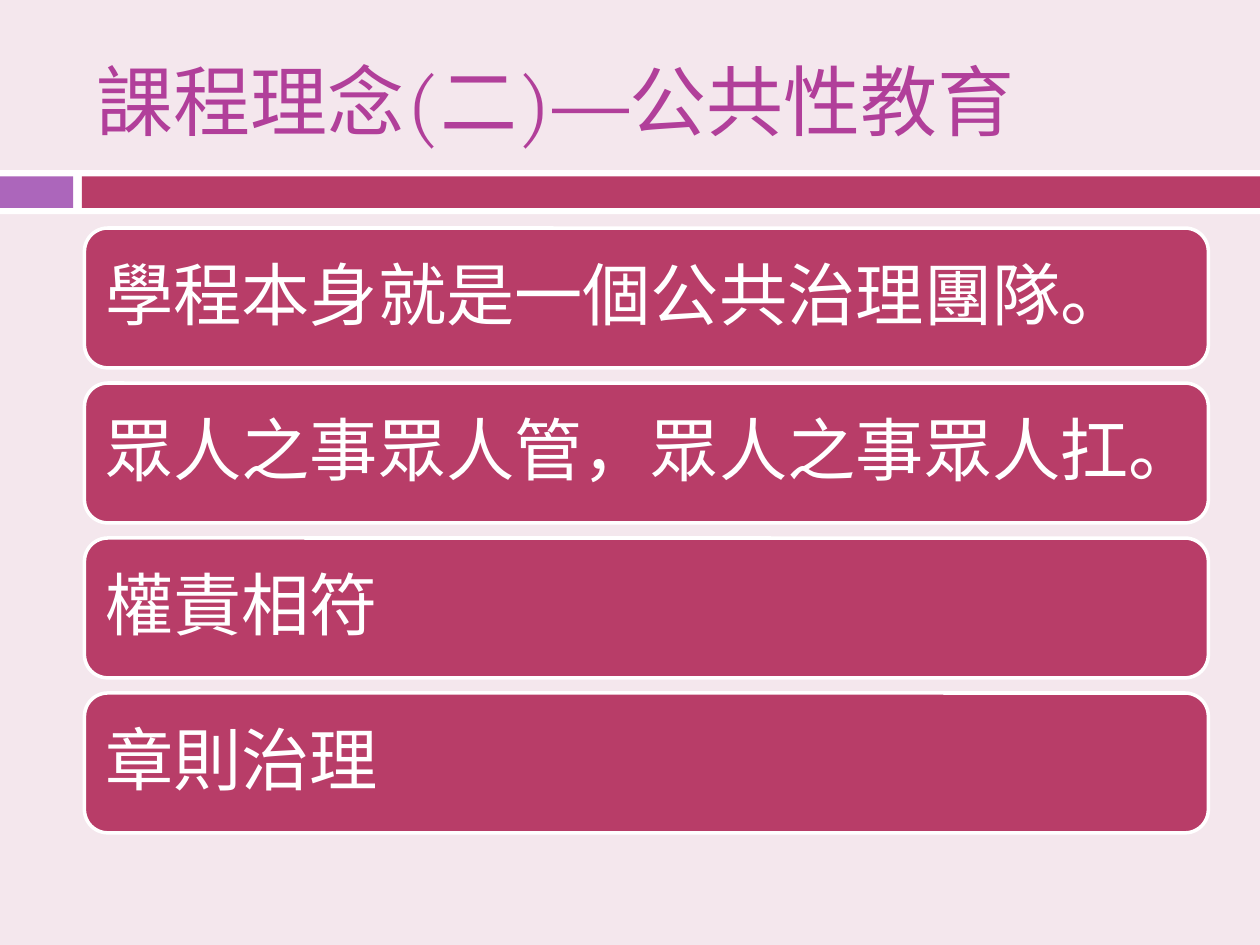
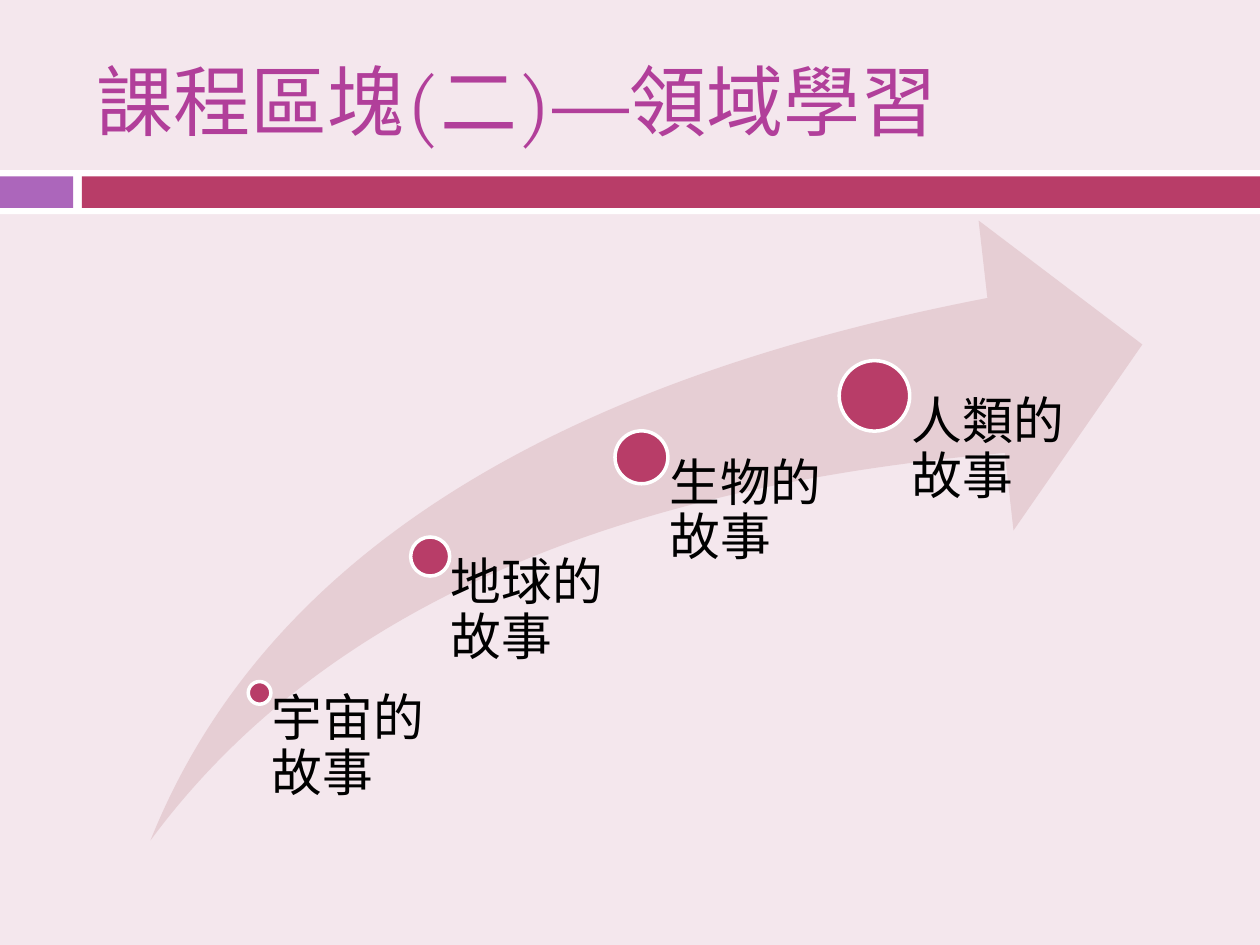
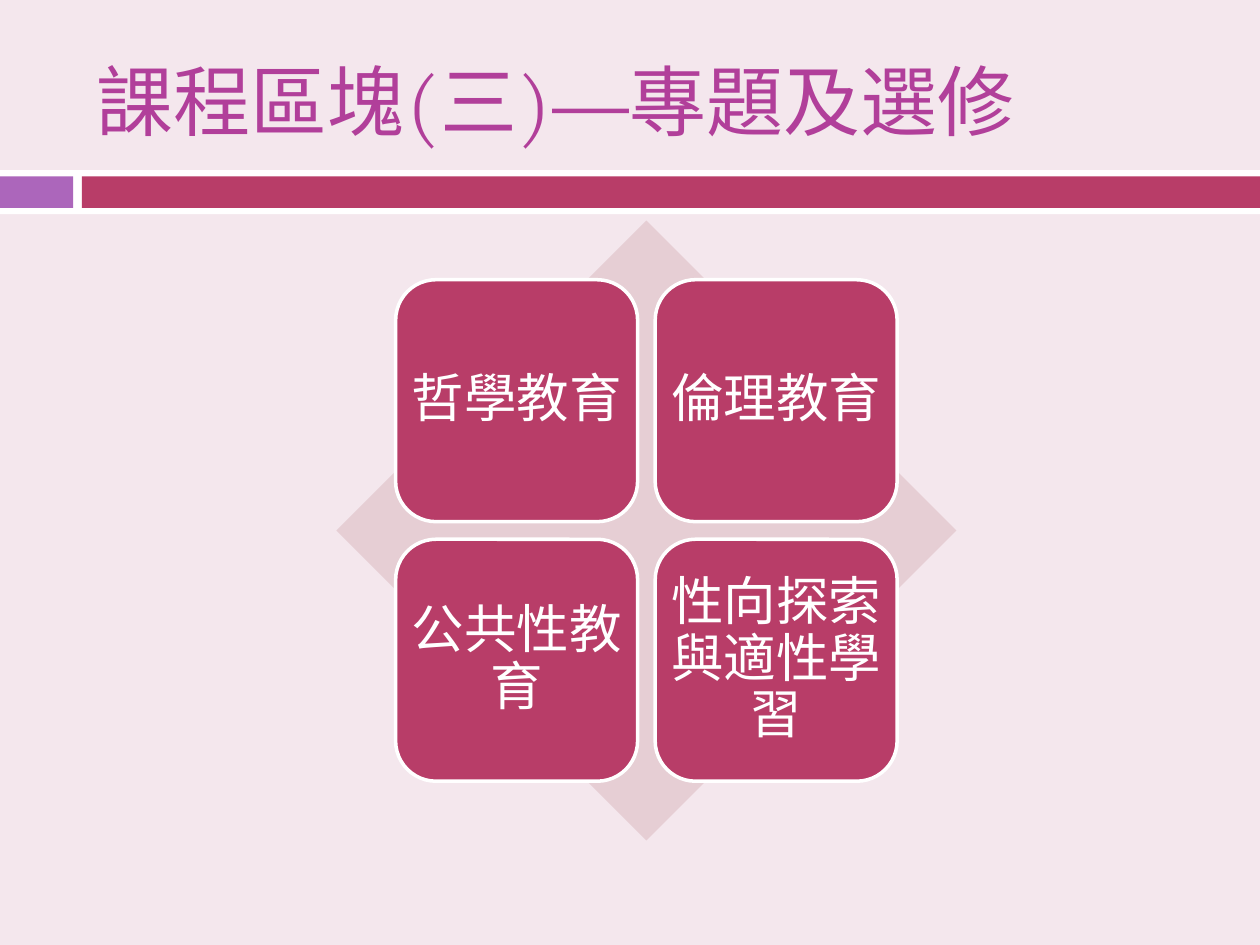
"""Three slides on a curriculum: public governance, learning fields and electives."""
from pptx import Presentation
from pptx.dml.color import RGBColor
from pptx.enum.shapes import MSO_SHAPE
from pptx.enum.text import MSO_ANCHOR, PP_ALIGN
from pptx.util import Inches, Pt

RECT, ROUNDED = MSO_SHAPE.RECTANGLE, MSO_SHAPE.ROUNDED_RECTANGLE
OVAL, DIAMOND, SWOOSH = MSO_SHAPE.OVAL, MSO_SHAPE.DIAMOND, MSO_SHAPE.SWOOSH_ARROW
TOP, MIDDLE = MSO_ANCHOR.TOP, MSO_ANCHOR.MIDDLE
LEFT, CENTER = PP_ALIGN.LEFT, PP_ALIGN.CENTER

FONT = "TeX Gyre Pagella"
COLORS = {
    "background": "F4E7ED", "title": "B13F9A", "accent": "B83D68",
    "purple": "AC66BB", "pale": "E6CED4", "white": "FFFFFF", "black": "000000",
}
SLIDE_W, SLIDE_H = 10, 7.5
BODY_X, BODY_Y, BODY_W, BODY_H = 0.67, 1.75, 8.92, 4.92
BANDS = [
    ("white", 0, 1.35, SLIDE_W, 0.35),
    ("purple", 0, 1.4, 0.58, 0.25),
    ("accent", 0.65, 1.4, SLIDE_W - 0.65, 0.25),
]
FORMATS = {
    "title": dict(size=44, color="title", anchor=MIDDLE, align=LEFT, spacing=1.0,
                  insets=(0.1, 0.05, 0.1, 0.05)),
    "principle": dict(size=39, color="white", anchor=MIDDLE, align=LEFT, spacing=0.9,
                      insets=(0.11,) * 4),
    "story": dict(size=29, color="black", anchor=TOP, align=LEFT, spacing=0.9,
                  insets=(0,) * 4),
    "elective": dict(size=30, color="white", anchor=MIDDLE, align=CENTER, spacing=0.9,
                     insets=(0.03,) * 4),
}

PRINCIPLES = [
    "學程本身就是一個公共治理團隊。",
    "眾人之事眾人管，眾人之事眾人扛。",
    "權責相符",
    "章則治理",
]
STORIES = [
    ("宇宙的故事", 0.11, 0.762, 0.18, 1.35),
    ("地球的故事", 0.282, 0.542, 0.31, 1.65),
    ("生物的故事", 0.495, 0.382, 0.42, 1.65),
    ("人類的故事", 0.73, 0.283, 0.56, 1.65),
]
ELECTIVES = [["哲學教育", "倫理教育"], ["公共性教育", "性向探索與適性學習"]]


def rgb(name):
    return RGBColor.from_string(COLORS[name])


def write(holder, text, kind, **changes):
    look = {**FORMATS[kind], **changes}
    frame = holder.text_frame
    left, top, right, bottom = map(Inches, look["insets"])
    paragraph = frame.paragraphs[0]
    run = paragraph.add_run()
    run.text = text
    settings = [
        (frame, dict(word_wrap=True, vertical_anchor=look["anchor"], margin_left=left,
                     margin_top=top, margin_right=right, margin_bottom=bottom)),
        (paragraph, dict(alignment=look["align"], line_spacing=look["spacing"])),
        (run.font, dict(name=FONT, size=Pt(look["size"]))),
    ]
    for target, values in settings:
        for key, value in values.items():
            setattr(target, key, value)
    run.font.color.rgb = rgb(look["color"])


def draw(slide, preset, fill, x, y, w, h, outlined=False):
    shape = slide.shapes.add_shape(preset, *map(Inches, (x, y, w, h)))
    shape.shadow.inherit = False
    shape.fill.solid()
    shape.fill.fore_color.rgb = rgb(fill)
    if outlined:
        shape.line.color.rgb = rgb("white")
        shape.line.width = Pt(2)
    else:
        shape.line.fill.background()
    return shape


def label(slide, text, kind, x, y, w, h, **changes):
    box = slide.shapes.add_textbox(*map(Inches, (x, y, w, h)))
    write(box, text, kind, **changes)


def draw_principles(slide):
    height, pitch = 1.11, 1.23
    for row, principle in enumerate(PRINCIPLES):
        bar = draw(slide, ROUNDED, "accent", BODY_X, 1.81 + row * pitch, BODY_W, height, True)
        write(bar, principle, "principle")


def draw_stories(slide):
    arrow_w = BODY_H * 1.6
    arrow_x = BODY_X + (BODY_W - arrow_w) / 2
    arrow = draw(slide, SWOOSH, "pale", arrow_x, BODY_Y, arrow_w, BODY_H)
    for index in range(2):
        arrow.adjustments[index] = 0.25
    for story, across, down, size, label_w in STORIES:
        x, y = arrow_x + across * arrow_w, BODY_Y + down * BODY_H
        draw(slide, OVAL, "accent", x - size / 2, y - size / 2, size, size, True)
        label(slide, story, "story", x, y, label_w, BODY_Y + BODY_H - y,
              insets=(0.53 * size, 0, 0, 0))


def draw_electives(slide):
    side, gap = 1.92, 0.14
    diamond_x = BODY_X + (BODY_W - BODY_H) / 2
    draw(slide, DIAMOND, "pale", diamond_x, BODY_Y, BODY_H, BODY_H)
    margin = (BODY_H - 2 * side - gap) / 2
    for row, names in enumerate(ELECTIVES):
        for column, elective in enumerate(names):
            x = diamond_x + margin + column * (side + gap)
            y = BODY_Y + margin + row * (side + gap)
            write(draw(slide, ROUNDED, "accent", x, y, side, side, True), elective, "elective")


SLIDES = [
    ("課程理念(二)—公共性教育", draw_principles),
    ("課程區塊(二)—領域學習", draw_stories),
    ("課程區塊(三)—專題及選修", draw_electives),
]


def main():
    deck = Presentation()
    deck.slide_width, deck.slide_height = Inches(SLIDE_W), Inches(SLIDE_H)
    for title, draw_body in SLIDES:
        slide = deck.slides.add_slide(deck.slide_layouts[6])
        slide.background.fill.solid()
        slide.background.fill.fore_color.rgb = rgb("background")
        for fill, *place in BANDS:
            draw(slide, RECT, fill, *place)
        label(slide, title, "title", BODY_X, 0.25, BODY_W, 1.08)
        draw_body(slide)
    deck.save("out.pptx")


if __name__ == "__main__":
    main()
